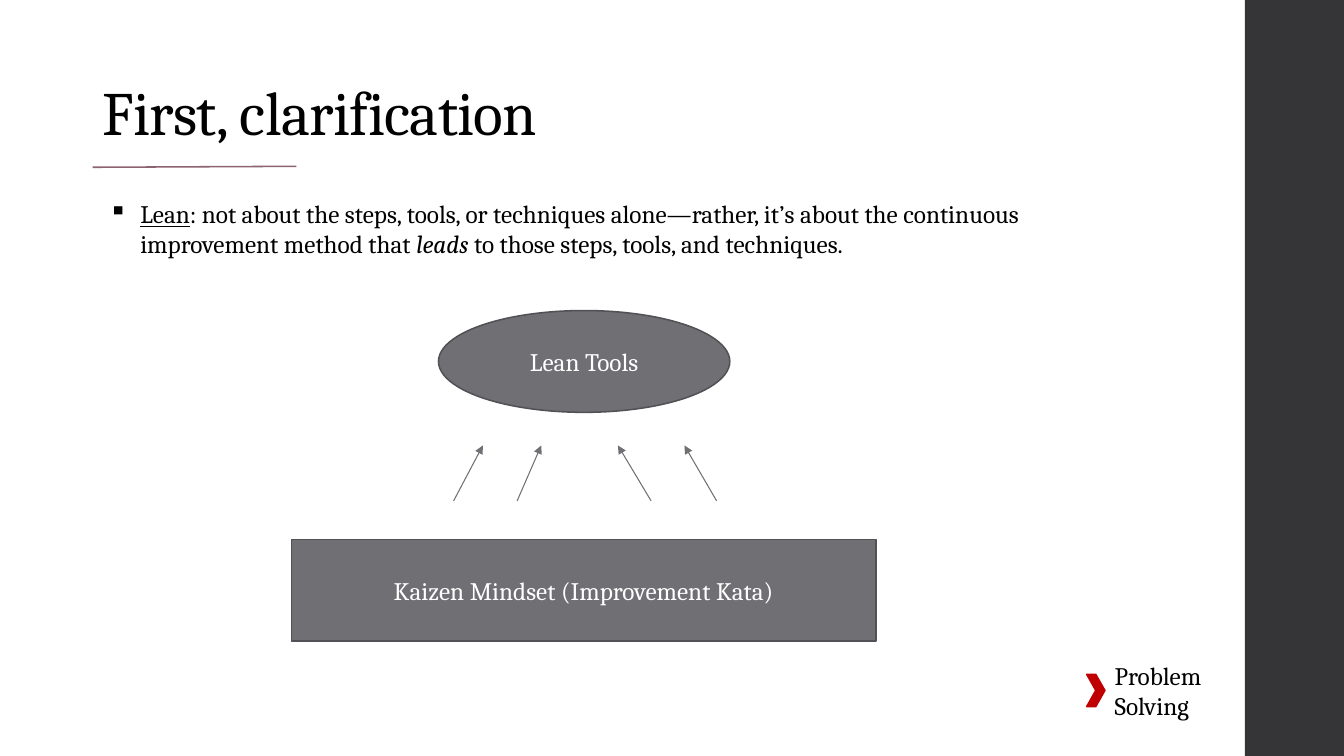
from lxml import etree
from pptx import Presentation
from pptx.dml.color import RGBColor
from pptx.enum.shapes import MSO_CONNECTOR, MSO_SHAPE
from pptx.enum.text import MSO_ANCHOR, PP_ALIGN
from pptx.oxml.ns import qn
from pptx.util import Pt

RECTANGLE = MSO_SHAPE.RECTANGLE
OVAL = MSO_SHAPE.OVAL
CHEVRON = MSO_SHAPE.CHEVRON
STRAIGHT = MSO_CONNECTOR.STRAIGHT
TOP, MIDDLE, BOTTOM = MSO_ANCHOR.TOP, MSO_ANCHOR.MIDDLE, MSO_ANCHOR.BOTTOM
CENTER = PP_ALIGN.CENTER

BLACK = RGBColor(0x00, 0x00, 0x00)
WHITE = RGBColor(0xFF, 0xFF, 0xFF)
CHARCOAL = RGBColor(0x35, 0x35, 0x37)
GRAY = RGBColor(0x6F, 0x6F, 0x74)
DARK_GRAY = RGBColor(0x52, 0x52, 0x56)
MAUVE = RGBColor(0x8D, 0x63, 0x74)
RED = RGBColor(0xC0, 0x00, 0x00)

FONT = "Cambria"
ARROW_BOTTOM, ARROW_TOP = 357.8, 318.2
ARROW_SPANS = [(324, 344.9), (369.4, 386.6), (465.1, 441.4), (511.9, 488.9)]


def add_run(paragraph, text, size=18, color=BLACK, underline=None, italic=None):
    run = paragraph.add_run()
    run.text = text
    font = run.font
    font.name, font.size, font.color.rgb = FONT, Pt(size), color
    font.underline, font.italic = underline, italic
    return run


def add_text_box(slide, left, top, width, height, anchor=TOP):
    """Add a wrapping text box and return its first paragraph."""
    box = slide.shapes.add_textbox(Pt(left), Pt(top), Pt(width), Pt(height))
    box.text_frame.word_wrap = True
    box.text_frame.vertical_anchor = anchor
    return box.text_frame.paragraphs[0]


def add_filled_shape(slide, kind, left, top, width, height, fill, outline=None, label=None):
    shape = slide.shapes.add_shape(kind, Pt(left), Pt(top), Pt(width), Pt(height))
    shape.shadow.inherit = False
    shape.fill.solid()
    shape.fill.fore_color.rgb = fill
    if outline is None:
        shape.line.fill.background()
    else:
        shape.line.color.rgb = outline
        shape.line.width = Pt(1.1)
    if label:
        shape.text_frame.word_wrap = True
        shape.text_frame.vertical_anchor = MIDDLE
        paragraph = shape.text_frame.paragraphs[0]
        paragraph.alignment = CENTER
        add_run(paragraph, label, color=WHITE)


def add_line(slide, start, end, color, width, arrow=False):
    line = slide.shapes.add_connector(STRAIGHT, *(Pt(value) for value in start + end))
    line.line.color.rgb = color
    line.line.width = Pt(width)
    properties = line._element.spPr
    if arrow:
        etree.SubElement(properties.find(qn("a:ln")), qn("a:tailEnd"), type="triangle")
    etree.SubElement(properties, qn("a:effectLst"))


def add_bullet(paragraph, indent):
    properties = paragraph._p.get_or_add_pPr()
    properties.set("marL", str(Pt(indent)))
    properties.set("indent", str(-Pt(indent)))
    etree.SubElement(properties, qn("a:buChar"), char="▪")


def main():
    presentation = Presentation()
    presentation.slide_width, presentation.slide_height = Pt(960), Pt(540)
    slide = presentation.slides.add_slide(presentation.slide_layouts[6])

    # Side band
    add_filled_shape(slide, RECTANGLE, 889.2, 0, 70.8, 540, CHARCOAL)

    # Title and its rule
    title = add_text_box(slide, 66.2, 37.4, 395.3, 72.7, BOTTOM)
    title.line_spacing = 0.9
    title_run = add_run(title, "First, clarification", size=44)
    title_run.font._element.set("spc", "-50")
    add_line(slide, (66.2, 119.5), (211.7, 118.8), MAUVE, 1.1)

    # Definition
    definition = add_text_box(slide, 70.6, 138.2, 748.1, 72.7)
    add_bullet(definition, 22.5)
    add_run(definition, "Lean", underline=True)
    add_run(definition, ": not about the steps, tools, or techniques alone—rather, "
                        "it’s about the continuous improvement method that ")
    add_run(definition, "leads", italic=True)
    add_run(definition, " to those steps, tools, and techniques.")

    # Mindset supporting the tools
    add_filled_shape(slide, RECTANGLE, 208.1, 385.2, 417.6, 72.7, GRAY, DARK_GRAY,
                     "Kaizen Mindset (Improvement Kata)")
    for start_x, end_x in ARROW_SPANS:
        add_line(slide, (start_x, ARROW_BOTTOM), (end_x, ARROW_TOP), GRAY, 0.75, arrow=True)
    add_filled_shape(slide, OVAL, 313.2, 221.8, 208.1, 72.7, GRAY, DARK_GRAY, "Lean Tools")

    # Section marker
    add_filled_shape(slide, CHEVRON, 776.2, 481.7, 13, 23, RED, RED)
    add_run(add_text_box(slide, 789.1, 468, 85.7, 51.1), "Problem Solving")

    presentation.save("out.pptx")


if __name__ == "__main__":
    main()
